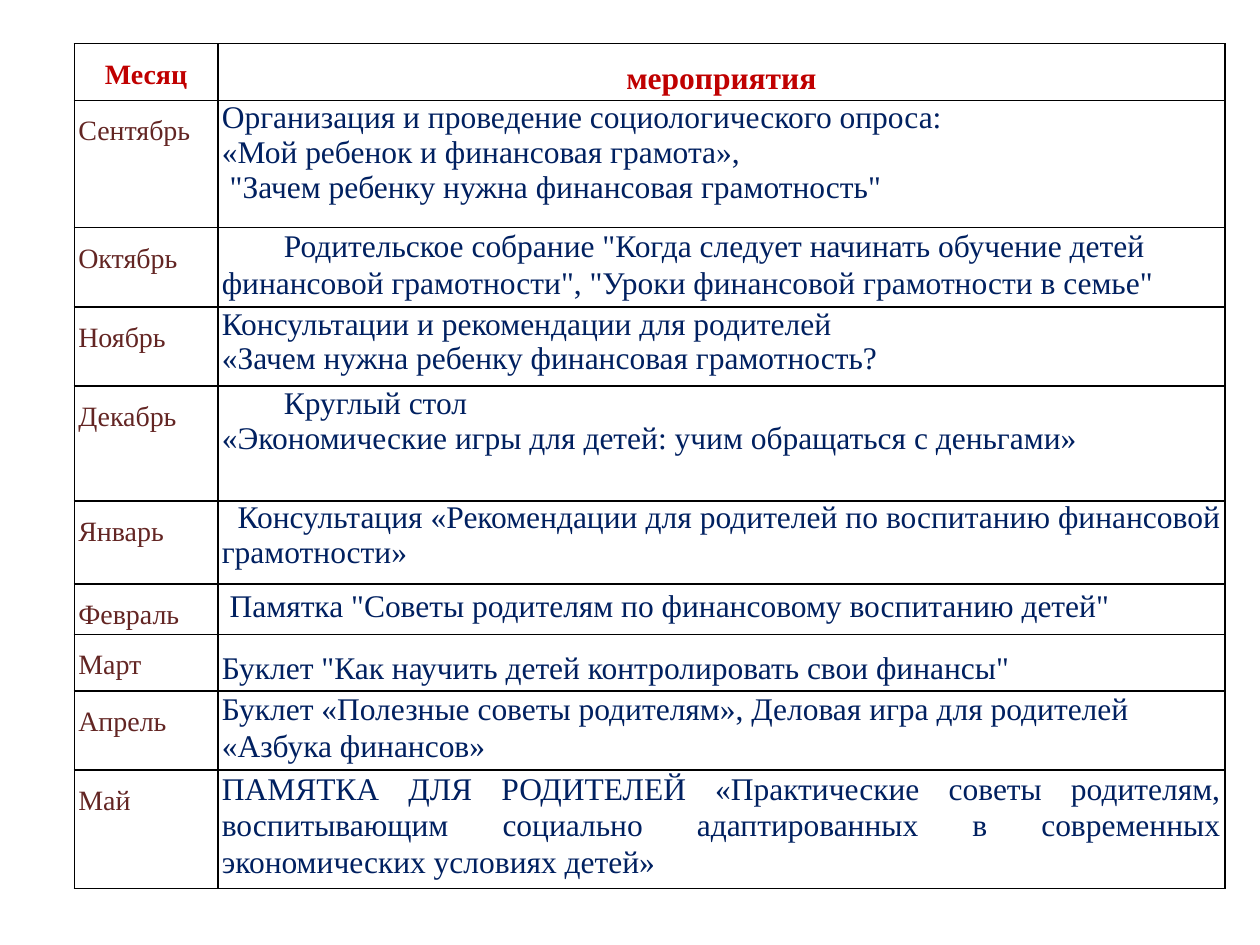
import pptx
import pptx.util
import pptx.dml.color
import pptx.enum.text
import pptx.oxml
import lxml.etree

Pt = pptx.util.Pt
ALIGN = pptx.enum.text.PP_ALIGN
LEFT, MID, JUST = ALIGN.LEFT, ALIGN.CENTER, ALIGN.JUSTIFY
FONT = "Times New Roman"
RED, BROWN, NAVY = "C00000", "632523", "002060"
BLACK, WHITE = "000000", "FFFFFF"

# month, row height, align, line spacing, space after, [(first-line indent, text)]
PLAN = [
    ("Сентябрь", 72.7, LEFT, 1, 0, [
        (0, "Организация и проведение социологического опроса:"),
        (0, "«Мой ребенок и финансовая грамота»,"),
        (4.5, '"Зачем ребенку нужна финансовая грамотность"')]),
    ("Октябрь", 45.3, LEFT, 1.05, 0, [
        (35.4, 'Родительское собрание "Когда следует начинать обучение детей '
               'финансовой грамотности", "Уроки финансовой грамотности в семье"')]),
    ("Ноябрь", 45.3, LEFT, 1, 0, [
        (0, "Консультации и рекомендации для родителей"),
        (0, "«Зачем нужна ребенку финансовая грамотность?")]),
    ("Декабрь", 65.5, JUST, 1, 0, [
        (35.4, "Круглый стол"),
        (0, "«Экономические игры для детей: учим обращаться с деньгами»")]),
    ("Январь", 47.5, JUST, 1, 0, [
        (9, "Консультация «Рекомендации для родителей по воспитанию "
            "финансовой грамотности»")]),
    ("Февраль", 28.8, LEFT, 1.15, 0, [
        (4.5, 'Памятка "Советы родителям по финансовому воспитанию детей"')]),
    ("Март", 32.4, JUST, 1.5, 0, [
        (0, 'Буклет "Как научить детей контролировать свои финансы"')]),
    ("Апрель", 45.3, LEFT, 1.05, 8, [
        (0, "Буклет «Полезные советы родителям», Деловая игра для родителей "
            "«Азбука финансов»")]),
    ("Май", 67.7, JUST, 1.05, 0, [
        (0, "ПАМЯТКА ДЛЯ РОДИТЕЛЕЙ «Практические советы родителям, "
            "воспитывающим социально адаптированных в современных "
            "экономических условиях детей»")]),
]


def paint(hue):
    return pptx.dml.color.RGBColor.from_string(hue)


def edge(cell):
    """Draw a thin black line on all four sides, ahead of the fill in the XML."""
    props = cell._tc.get_or_add_tcPr()
    for spot, side in enumerate(("lnL", "lnR", "lnT", "lnB")):
        line = pptx.oxml.parse_xml(
            f'<a:{side} xmlns:a="http://schemas.openxmlformats.org/drawingml/2006/main" '
            f'w="{Pt(1)}"><a:solidFill><a:srgbClr val="{BLACK}"/></a:solidFill></a:{side}>')
        props.insert(spot, line)


def write(cell, lines, size, hue, align, lead, after=0, bold=False):
    """Fill a cell with (indent, text) lines."""
    cell.fill.solid()
    cell.fill.fore_color.rgb = paint(WHITE)
    edge(cell)
    cell.margin_left = cell.margin_right = Pt(2.3)
    cell.margin_top = cell.margin_bottom = 0
    cell.text_frame.text = "\n".join(text for _, text in lines)
    for para, (indent, _) in zip(cell.text_frame.paragraphs, lines):
        para.alignment = align
        para.line_spacing = lead
        para.space_after = Pt(after)
        if indent:
            props = para._p.get_or_add_pPr()
            props.set("marL", "0")
            props.set("indent", str(Pt(indent)))
        for run in para.runs:
            run.font.name = FONT
            run.font.size = Pt(size)
            run.font.bold = bold
            run.font.color.rgb = paint(hue)


def add_plan(slide, left, top, width, height):
    rows = len(PLAN) + 1
    table = slide.shapes.add_table(
        rows, 2, Pt(left), Pt(top), Pt(width), Pt(height)).table
    first = 82
    table.columns[0].width = Pt(first)
    table.columns[1].width = Pt(width - first)
    table.rows[0].height = Pt(32.4)
    write(table.cell(0, 0), [(0, "Месяц")], 16, RED, MID, 1.5, bold=True)
    write(table.cell(0, 1), [(0, "мероприятия")], 18, RED, MID, 1.5, bold=True)
    for row, (month, tall, align, lead, after, lines) in enumerate(PLAN, 1):
        table.rows[row].height = Pt(tall)
        write(table.cell(row, 0), [(0, month)], 16, BROWN, JUST, 1.5)
        write(table.cell(row, 1), lines, 18, NAVY, align, lead, after)


def main():
    deck = pptx.Presentation()
    deck.slide_width, deck.slide_height = Pt(720), Pt(540)
    slide = deck.slides.add_slide(deck.slide_layouts[6])
    add_plan(slide, 42.5, 25, 657.5, 483)
    deck.save("out.pptx")


if __name__ == "__main__":
    main()
